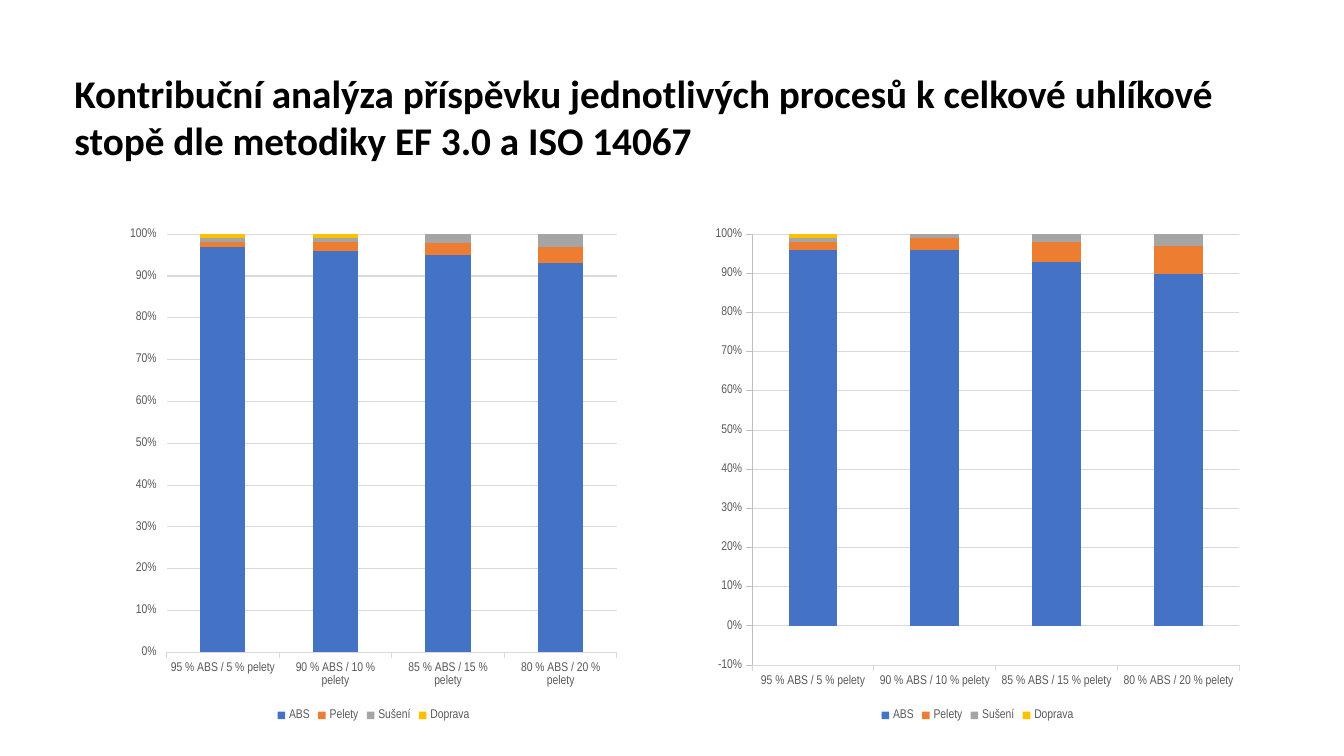
from dataclasses import dataclass

from pptx import Presentation
from pptx.chart.data import CategoryChartData
from pptx.dml.color import RGBColor as RGB
from pptx.enum.chart import (
    XL_AXIS_CROSSES as Crosses,
    XL_CHART_TYPE as ChartType,
    XL_LEGEND_POSITION as LegendPos,
    XL_TICK_LABEL_POSITION as LabelPos,
    XL_TICK_MARK as Tick,
)
from pptx.util import Inches, Pt


@dataclass(frozen=True)
class Theme:
    title_font: str = "Calibri"
    chart_font: str = "Arial Narrow"
    title_size: int = 28
    label_size: int = 9
    line_width: float = 0.75
    title: str = "000000"
    label: str = "595959"
    grid: str = "D9D9D9"
    axis: str = "BFBFBF"
    series: tuple = ("4472C4", "ED7D31", "A5A5A5", "FFC000")


TITLE = ("Kontribuční analýza příspěvku jednotlivých procesů k celkové uhlíkové "
         "stopě dle metodiky EF 3.0 a ISO 14067")
PROCESSES = ("ABS", "Pelety", "Sušení", "Doprava")
MIXES = [f"{100 - share} % ABS / {share} % pelety" for share in (5, 10, 15, 20)]
EF_SHARES = ((98, 97, 95, 93), (1, 2, 3, 4), (1, 1, 2, 3), (1, 1, 0, 0))
ISO_SHARES = ((97, 95, 92, 89), (-2, -3, -5, -7), (1, 1, 2, 3), (1, 0, 0, 0))


class SlideBuilder:
    """Draws styled elements on the current slide."""

    def __init__(self, s, theme):
        self.s = s
        self.theme = theme

    def style_font(self, font, name, size, color, bold=False):
        font.name = name
        font.size = Pt(size)
        font.bold = bold
        font.color.rgb = RGB.from_string(color)

    def style_line(self, line, color):
        line.width = Pt(self.theme.line_width)
        line.color.rgb = RGB.from_string(color)

    def style_label(self, font):
        self.style_font(font, self.theme.chart_font, self.theme.label_size, self.theme.label)

    def title(self, text, box):
        tf = self.s.shapes.add_textbox(*map(Inches, box)).text_frame
        tf.word_wrap = True
        tf.text = text
        r = tf.paragraphs[0].runs[0]
        self.style_font(r.font, self.theme.title_font, self.theme.title_size,
                        self.theme.title, bold=True)

    def share_chart(self, shares, box, minimum=0, axis_line=False):
        data = CategoryChartData()
        data.categories = MIXES
        for name, values in zip(PROCESSES, shares):
            data.add_series(name, values)
        chart = self.s.shapes.add_chart(
            ChartType.COLUMN_STACKED_100, *map(Inches, box), data).chart
        chart.has_title = False
        self.style_label(chart.font)
        chart.has_legend = True
        chart.legend.position = LegendPos.BOTTOM
        chart.legend.include_in_layout = False
        self.style_label(chart.legend.font)

        plot = chart.plots[0]
        plot.gap_width = 150
        plot.overlap = 100
        plot.vary_by_categories = False
        for series, color in zip(plot.series, self.theme.series):
            series.invert_if_negative = False
            series.format.fill.solid()
            series.format.fill.fore_color.rgb = RGB.from_string(color)

        self.axes(chart.category_axis, chart.value_axis, minimum, axis_line)

    def axes(self, mixes, shares, minimum, axis_line):
        for axis in (mixes, shares):
            axis.major_tick_mark = Tick.OUTSIDE
            axis.minor_tick_mark = Tick.NONE
            axis.tick_label_position = LabelPos.LOW
            self.style_label(axis.tick_labels.font)
        self.style_line(mixes.format.line, self.theme.grid)
        shares.minimum_scale = minimum
        shares.maximum_scale = 1
        shares.major_unit = 0.1
        shares.crosses = Crosses.MINIMUM
        shares.has_major_gridlines = True
        self.style_line(shares.major_gridlines.format.line, self.theme.grid)
        shares.tick_labels.number_format = "0%"
        shares.tick_labels.number_format_is_linked = False
        if axis_line:
            self.style_line(shares.format.line, self.theme.axis)
        else:
            shares.format.line.fill.background()


def main():
    prs = Presentation()
    prs.slide_width = Inches(13.33)
    prs.slide_height = Inches(7.5)
    slide = SlideBuilder(prs.slides.add_slide(prs.slide_layouts[6]), Theme())
    slide.share_chart(ISO_SHARES, (6.99, 2.16, 5.41, 5.04), minimum=-0.1, axis_line=True)
    slide.title(TITLE, (0.64, 0.64, 11.76, 1.04))
    slide.share_chart(EF_SHARES, (1.19, 2.16, 5.03, 5.04))
    prs.save("out.pptx")


if __name__ == "__main__":
    main()
